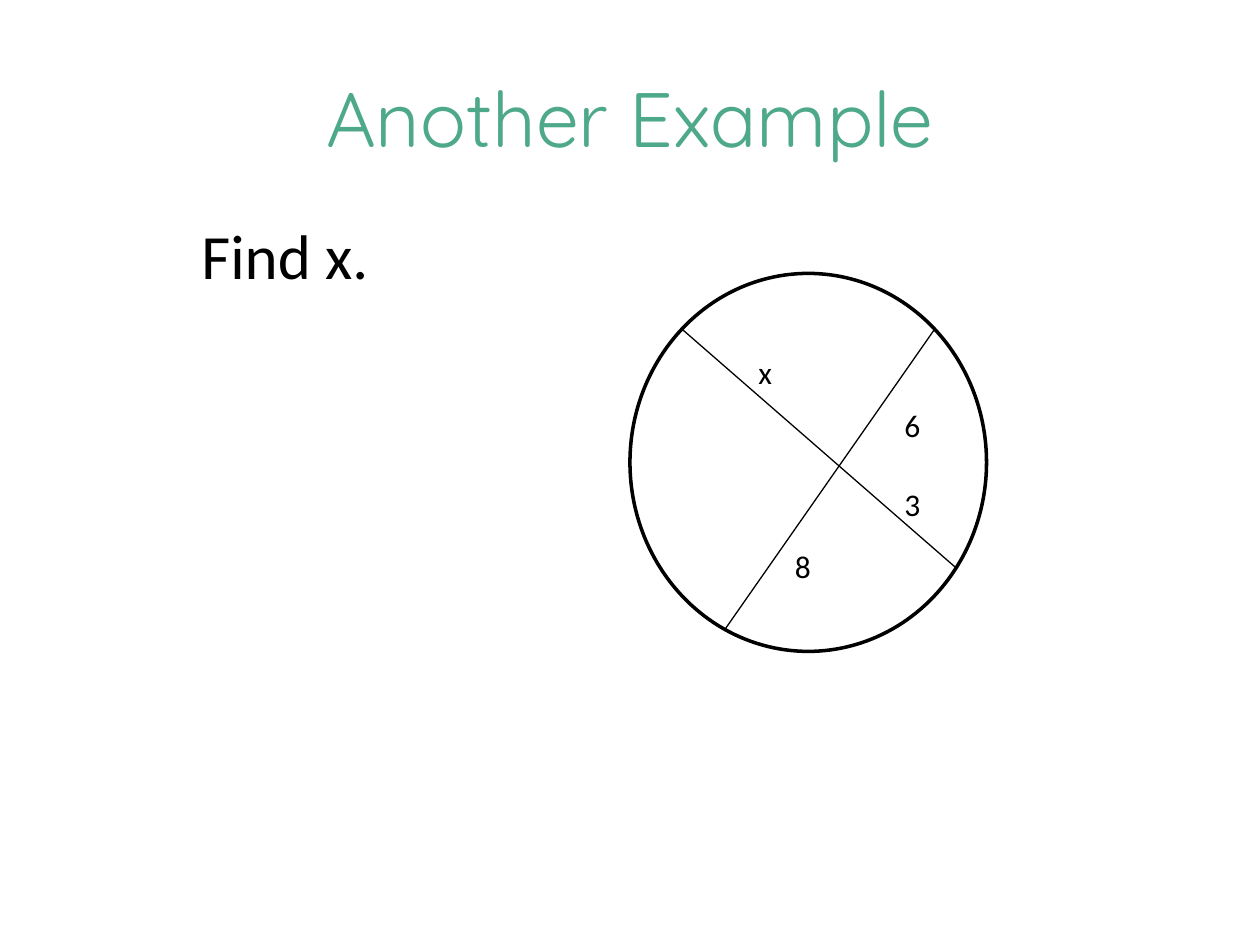
from lxml import etree
from pptx import Presentation
from pptx.dml.color import RGBColor
from pptx.enum.shapes import MSO_CONNECTOR, MSO_SHAPE
from pptx.enum.text import MSO_ANCHOR, PP_ALIGN
from pptx.oxml.ns import qn
from pptx.util import Inches, Pt

STRAIGHT = MSO_CONNECTOR.STRAIGHT
OVAL = MSO_SHAPE.OVAL
TOP, MIDDLE = MSO_ANCHOR.TOP, MSO_ANCHOR.MIDDLE
LEFT, CENTER = PP_ALIGN.LEFT, PP_ALIGN.CENTER

BLACK, WHITE, GREEN = "000000", "FFFFFF", "4EA88A"

CHORDS = [
    ((5.41, 2.61), (7.58, 4.5)),
    ((5.75, 5), (7.42, 2.61)),
]
LABELS = [
    ("6", (7.08, 3.17, 0.5, 0.4)),
    ("8", (6.21, 4.29, 0.42, 0.42)),
    ("x", (5.92, 2.75, 0.67, 0.4)),
    ("3", (7.08, 3.8, 0.5, 0.4)),
]


def color(code):
    return RGBColor.from_string(code)


def inches(values):
    return [Inches(value) for value in values]


def add_text(slide, text, box, size, font="Calibri", ink=BLACK,
             align=LEFT, anchor=TOP):
    frame = slide.shapes.add_textbox(*inches(box)).text_frame
    frame.word_wrap = True
    frame.vertical_anchor = anchor
    frame.text = text
    para = frame.paragraphs[0]
    para.alignment = align
    style = para.runs[0].font
    style.name = font
    style.size = Pt(size)
    style.color.rgb = color(ink)


def add_circle(slide, box):
    circle = slide.shapes.add_shape(OVAL, *inches(box))
    circle.shadow.inherit = False
    circle.fill.solid()
    circle.fill.fore_color.rgb = color(WHITE)
    circle.line.color.rgb = color(BLACK)
    circle.line.width = Pt(2)


def add_chord(slide, start, end):
    chord = slide.shapes.add_connector(STRAIGHT, *inches(start + end))
    chord.line.color.rgb = color(BLACK)
    chord.line.width = Pt(0.75)
    etree.SubElement(chord._element.spPr, qn("a:effectLst"))


def main():
    deck = Presentation()
    deck.slide_width, deck.slide_height = inches((10, 7.5))
    slide = deck.slides.add_slide(deck.slide_layouts[6])
    slide.background.fill.solid()
    slide.background.fill.fore_color.rgb = color(WHITE)

    add_text(slide, "Another Example", (0.5, 0.3, 9, 1.25), 44,
             "Quicksand", GREEN, CENTER, MIDDLE)
    add_text(slide, "Find x.", (1.5, 1.67, 3.75, 0.71), 36)
    add_circle(slide, (5, 2.17, 2.83, 3))
    for start, end in CHORDS:
        add_chord(slide, start, end)
    for text, box in LABELS:
        add_text(slide, text, box, 18)

    deck.save("out.pptx")


if __name__ == "__main__":
    main()
